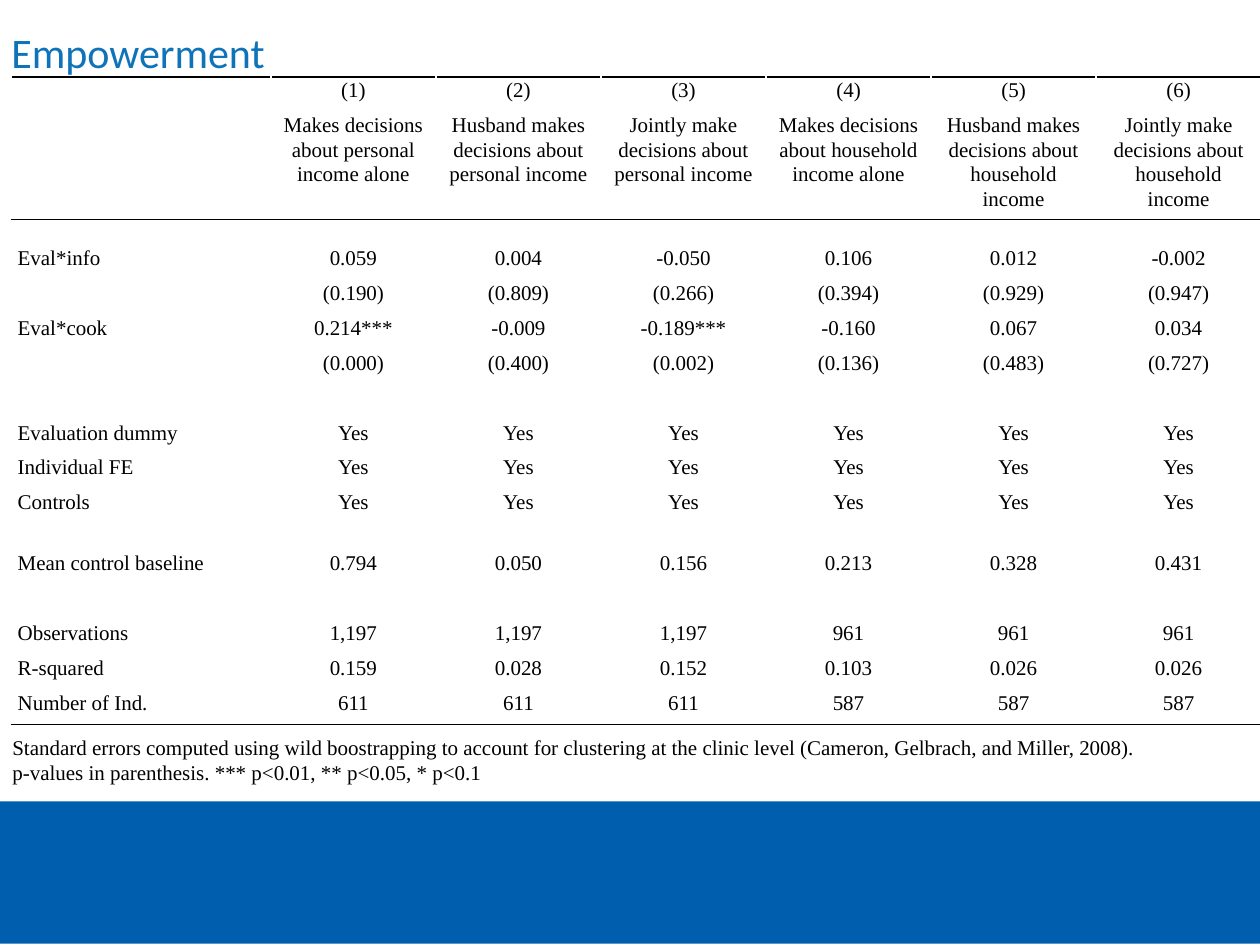
from lxml.etree import SubElement
from pptx import Presentation
from pptx.dml.color import RGBColor
from pptx.enum.shapes import MSO_SHAPE
from pptx.enum.text import MSO_ANCHOR, PP_ALIGN
from pptx.oxml import parse_xml
from pptx.oxml.ns import nsdecls, qn
from pptx.util import Inches, Pt

COLORS = {"band": "005EAE", "title": "0E73B9", "text": "000000"}
SERIF = "Times New Roman"


def add_span(para, text, size=12, font=SERIF, color="text"):
    span = para.add_run()
    span.text = text
    span.font.size = Pt(size)
    span.font.name = font
    span.font.color.rgb = RGBColor.from_string(COLORS[color])


def add_rule(cell, edge):
    """Draw a 1 pt line on one edge of a cell: lnT for top, lnB for bottom."""
    cell.fill.background()
    line = parse_xml(
        f'<a:{edge} {nsdecls("a")} w="{Pt(1)}"><a:solidFill>'
        f'<a:srgbClr val="{COLORS["text"]}"/></a:solidFill></a:{edge}>'
    )
    cell._tc.get_or_add_tcPr().insert(0, line)


deck = Presentation()
deck.slide_width = Inches(10)
deck.slide_height = Inches(7.5)
page = deck.slides.add_slide(deck.slide_layouts[6])

# Bottom band
band = page.shapes.add_shape(
    MSO_SHAPE.RECTANGLE, Inches(0), Inches(6.36), Inches(10), Inches(1.13)
)
band.shadow.inherit = False
band.fill.solid()
band.fill.fore_color.rgb = RGBColor.from_string(COLORS["band"])
band.line.fill.background()

# Title
title_box = page.shapes.add_textbox(Inches(0.09), Inches(0), Inches(8.2), Inches(0.61))
title = title_box.text_frame
title.word_wrap = True
title.vertical_anchor = MSO_ANCHOR.BOTTOM
title.margin_left = title.margin_right = title.margin_top = title.margin_bottom = 0
add_span(title.paragraphs[0], "Empowerment", 24, "Calibri", "title")

# Regression table
outcomes = [
    f"{who} decisions about {income}"
    for income, suffix in (("personal income", " alone"), ("household income", " alone"))
    for who in ("Makes", "Husband makes", "Jointly make")
]
outcomes = [text + " alone" if text.startswith("Makes") else text for text in outcomes]
BLANK = [""] * 7
YES = ["Yes"] * 6
rows = [
    [""] + [f"({number})" for number in range(1, 7)],
    [""] + outcomes,
    BLANK,
    ["Eval*info", "0.059", "0.004", "-0.050", "0.106", "0.012", "-0.002"],
    ["", "(0.190)", "(0.809)", "(0.266)", "(0.394)", "(0.929)", "(0.947)"],
    ["Eval*cook", "0.214***", "-0.009", "-0.189***", "-0.160", "0.067", "0.034"],
    ["", "(0.000)", "(0.400)", "(0.002)", "(0.136)", "(0.483)", "(0.727)"],
    BLANK,
    ["Evaluation dummy"] + YES,
    ["Individual FE"] + YES,
    ["Controls"] + YES,
    BLANK,
    ["Mean control baseline", "0.794", "0.050", "0.156", "0.213", "0.328", "0.431"],
    BLANK,
    ["Observations"] + ["1,197"] * 3 + ["961"] * 3,
    ["R-squared", "0.159", "0.028", "0.152", "0.103", "0.026", "0.026"],
    ["Number of Ind."] + ["611"] * 3 + ["587"] * 3,
]
row_height = Inches(20 / 72)
special_heights = {1: 3 * row_height, 2: Inches(0.2), 11: Inches(0.2)}
heights = [special_heights.get(index, row_height) for index in range(len(rows))]
rules = {0: "lnT", 1: "lnB", 2: "lnT", len(rows) - 1: "lnB"}

table = page.shapes.add_table(
    len(rows), 7, Inches(0.09), Inches(0.61), Inches(9.92), sum(heights)
).table
table.first_row = False
table.horz_banding = False
for index, column in enumerate(table.columns):
    column.width = Inches(1.31 if index else 2.06)

for row_index, texts in enumerate(rows):
    table.rows[row_index].height = heights[row_index]
    for column_index, text in enumerate(texts):
        cell = table.cell(row_index, column_index)
        cell.margin_left = cell.margin_right = Inches(0.05)
        cell.margin_top = cell.margin_bottom = 0
        cell.fill.background()
        para = cell.text_frame.paragraphs[0]
        para.line_spacing = 1.07
        para.alignment = PP_ALIGN.CENTER if column_index else PP_ALIGN.LEFT
        if text:
            add_span(para, text)
        else:
            SubElement(para._p, qn("a:endParaRPr"), sz="1200")
        if row_index in rules:
            add_rule(cell, rules[row_index])

# Table notes
notes_box = page.shapes.add_textbox(Inches(0), Inches(5.78), Inches(9.67), Inches(0.5))
notes = notes_box.text_frame
notes.word_wrap = True
add_span(
    notes.paragraphs[0],
    "Standard errors computed using wild boostrapping to account for clustering "
    "at the clinic level (Cameron, Gelbrach, and Miller, 2008).",
)
add_span(notes.add_paragraph(), "p-values in parenthesis. *** p<0.01, ** p<0.05, * p<0.1")

deck.save("out.pptx")
